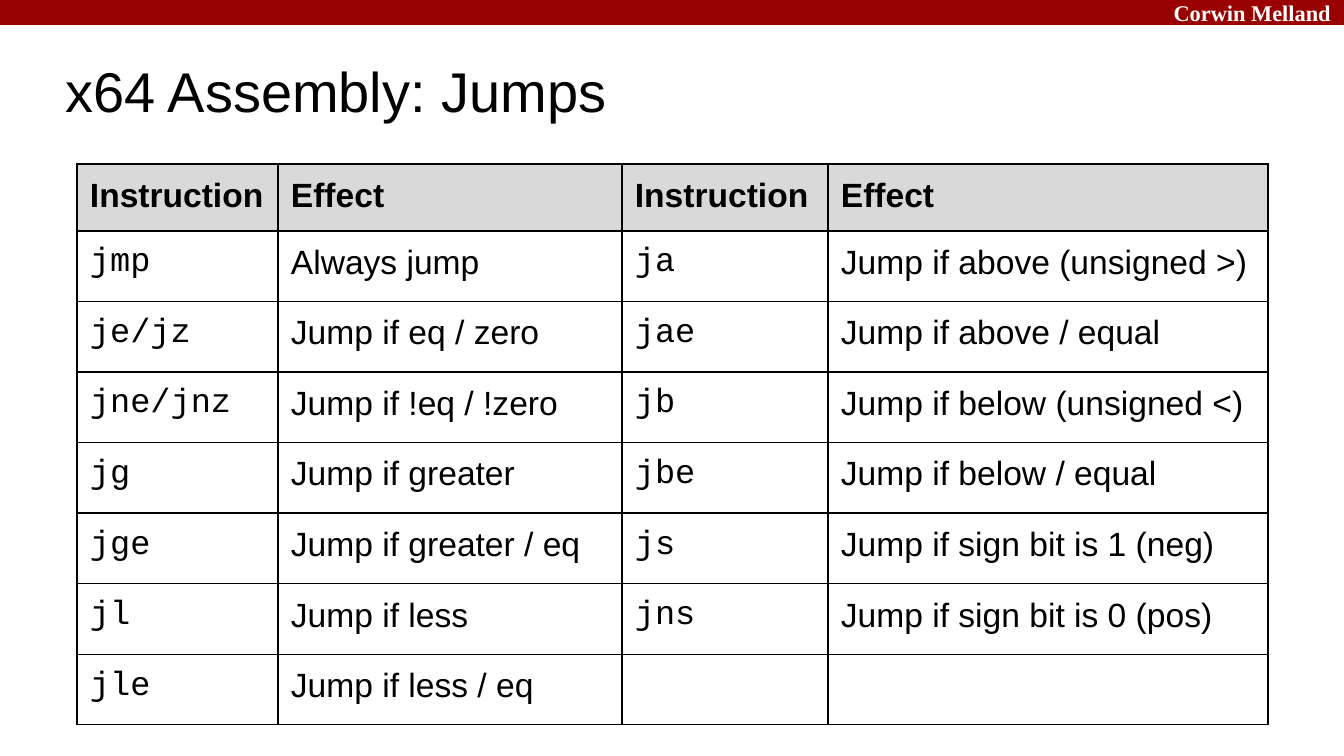
from dataclasses import dataclass

from lxml.etree import SubElement
from pptx import Presentation
from pptx.dml.color import RGBColor
from pptx.enum.shapes import MSO_SHAPE
from pptx.enum.text import MSO_ANCHOR, PP_ALIGN
from pptx.oxml.ns import qn
from pptx.util import Emu, Pt


@dataclass(frozen=True)
class Theme:
    """Hold the colours, fonts and type sizes."""
    red: str = "990000"
    white: str = "FFFFFF"
    black: str = "000000"
    grey: str = "D9D9D9"
    sans: str = "Arial"
    mono: str = "Courier New"
    serif: str = "Times New Roman"
    small: int = 12
    body: int = 18
    large: int = 30
    rule: float = 0.75


THEME = Theme()
SCALE = 9144000 / 1344
WIDTH, HEIGHT = 1344, 756
INSET = 13
COLS = (201, 344, 206, 440)
HEAD = 67
ROWS = (
    ("Instruction", "Effect", "Instruction", "Effect"),
    ("jmp", "Always jump", "ja", "Jump if above (unsigned >)"),
    ("je/jz", "Jump if eq / zero", "jae", "Jump if above / equal"),
    ("jne/jnz", "Jump if !eq / !zero", "jb", "Jump if below (unsigned <)"),
    ("jg", "Jump if greater", "jbe", "Jump if below / equal"),
    ("jge", "Jump if greater / eq", "js", "Jump if sign bit is 1 (neg)"),
    ("jl", "Jump if less", "jns", "Jump if sign bit is 0 (pos)"),
    ("jle", "Jump if less / eq", "", ""),
)


def px(size):
    """Turn pixels into EMU."""
    return Emu(round(size * SCALE))


def paint(fill, color):
    """Set a solid fill."""
    fill.solid()
    fill.fore_color.rgb = RGBColor.from_string(color)


def write(frame, text, font=THEME.sans, size=THEME.body, color=THEME.black,
          bold=False, align=PP_ALIGN.LEFT):
    """Write one formatted run into a text frame."""
    line = frame.paragraphs[0]
    line.alignment = align
    run = line.add_run()
    run.text = text
    run.font.name = font
    run.font.size = Pt(size)
    run.font.bold = bold
    run.font.color.rgb = RGBColor.from_string(color)


def label(slide, box, text, pad, **style):
    """Place a text box with one line, centred upright."""
    frame = slide.shapes.add_textbox(*map(px, box)).text_frame
    frame.word_wrap = True
    frame.vertical_anchor = MSO_ANCHOR.MIDDLE
    frame.margin_left = frame.margin_right = px(INSET)
    frame.margin_top = frame.margin_bottom = px(pad)
    write(frame, text, **style)


def banner(slide, box):
    """Draw the top band with the school name at its right."""
    left, top, width, height = box
    band = slide.shapes.add_shape(MSO_SHAPE.RECTANGLE, *map(px, box))
    band.shadow.inherit = False
    paint(band.fill, THEME.red)
    band.line.fill.background()
    name = (left + width - 220, top, 220, height)
    label(slide, name, "Corwin Melland", 0, font=THEME.serif, size=THEME.small,
          color=THEME.white, bold=True, align=PP_ALIGN.RIGHT)


def title(slide, box):
    """Place the slide title."""
    label(slide, box, "x64 Assembly: Jumps", INSET, size=THEME.large)


def border(cell):
    """Draw a thin line on all four sides of a cell."""
    props = cell._tc.get_or_add_tcPr()
    for index, side in enumerate(("lnL", "lnR", "lnT", "lnB")):
        line = props.makeelement(qn(f"a:{side}"), {"w": str(Pt(THEME.rule))})
        fill = SubElement(line, qn("a:solidFill"))
        SubElement(fill, qn("a:srgbClr"), val=THEME.black)
        props.insert(index, line)


def jumps(slide, box):
    """Build the table of jump instructions."""
    height = box[3]
    table = slide.shapes.add_table(len(ROWS), len(COLS), *map(px, box)).table
    table.horz_banding = False
    for col, width in zip(table.columns, COLS):
        col.width = px(width)
    for r, texts in enumerate(ROWS):
        head = r == 0
        table.rows[r].height = px(HEAD if head else (height - HEAD) / (len(ROWS) - 1))
        for c, text in enumerate(texts):
            cell = table.cell(r, c)
            cell.margin_left = cell.margin_right = px(INSET)
            cell.margin_top = cell.margin_bottom = px(INSET)
            if head:
                paint(cell.fill, THEME.grey)
            else:
                cell.fill.background()
            border(cell)
            if text:
                mono = not head and c % 2 == 0
                write(cell.text_frame, text, bold=head,
                      font=THEME.mono if mono else THEME.sans)


def main():
    """Build and save the slide."""
    deck = Presentation()
    deck.slide_width, deck.slide_height = px(WIDTH), px(HEIGHT)
    slide = deck.slides.add_slide(deck.slide_layouts[6])
    paint(slide.background.fill, THEME.white)
    banner(slide, (0, 0, WIDTH, 25))
    title(slide, (52, 49, 1116, 83))
    jumps(slide, (77, 164, sum(COLS), 561))
    deck.save("out.pptx")


if __name__ == "__main__":
    main()
